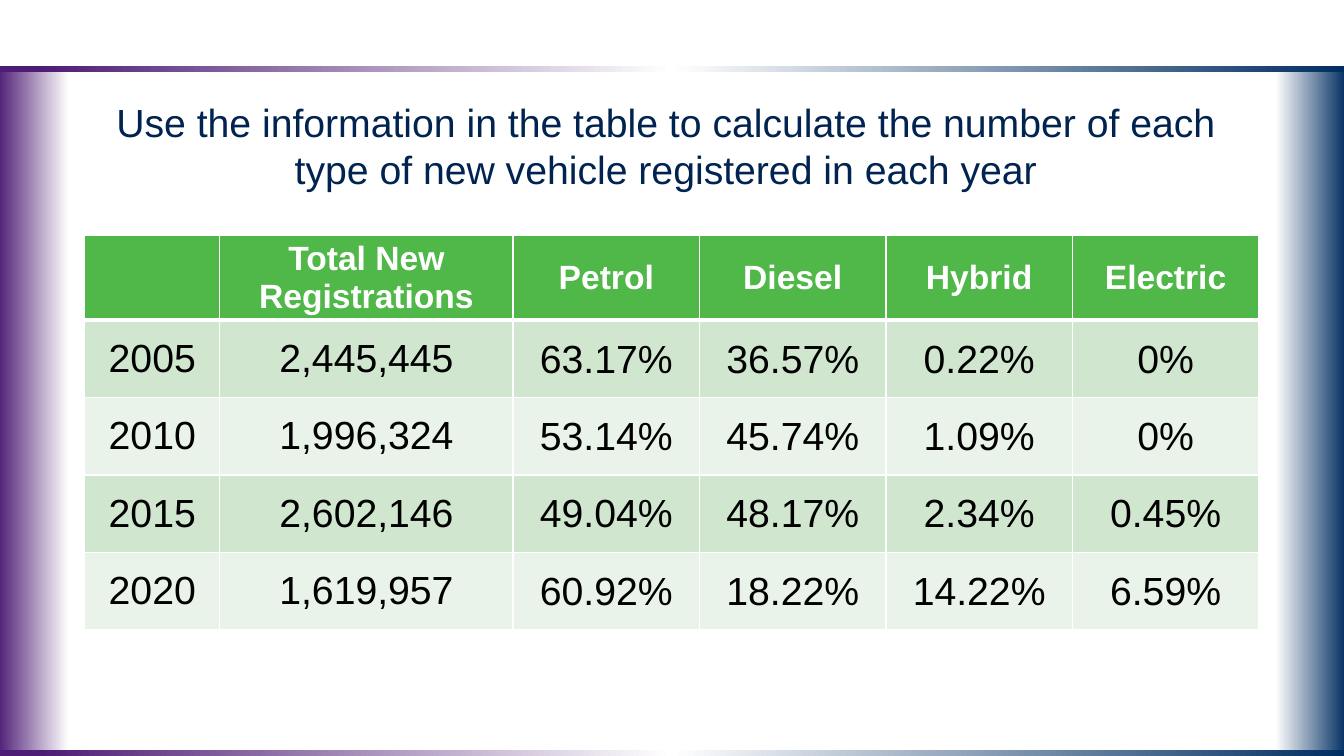
import pptx
import pptx.util
import pptx.dml.color
import pptx.enum.shapes
import pptx.enum.text
import pptx.oxml
import pptx.oxml.ns

Pt = pptx.util.Pt
qn = pptx.oxml.ns.qn
NAMESPACE = pptx.oxml.ns.nsdecls("a")

PURPLE, BLUE, WHITE = "4D1C74", "002D61", "FFFFFF"
GREEN, BANDS = "50B848", ("D0E6CF", "E9F3E9")

QUESTION = (
    "Use the information in the table to calculate the number of each "
    "type of new vehicle registered in each year"
)
REGISTRATIONS = [
    ["", "Total New Registrations", "Petrol", "Diesel", "Hybrid", "Electric"],
    ["2005", "2,445,445", "63.17%", "36.57%", "0.22%", "0%"],
    ["2010", "1,996,324", "53.14%", "45.74%", "1.09%", "0%"],
    ["2015", "2,602,146", "49.04%", "48.17%", "2.34%", "0.45%"],
    ["2020", "1,619,957", "60.92%", "18.22%", "14.22%", "6.59%"],
]


def rgb(color):
    return pptx.dml.color.RGBColor.from_string(color)


def write(frame, text, size=28, color="000000", bold=False):
    frame.word_wrap = True
    paragraph = frame.paragraphs[0]
    paragraph.text = text
    paragraph.alignment = pptx.enum.text.PP_ALIGN.CENTER
    paragraph.font.name = "Arial"
    paragraph.font.size = Pt(size)
    paragraph.font.bold = bold
    paragraph.font.color.rgb = rgb(color)


def add_gradient_band(slide, left, top, width, height, stops):
    band = slide.shapes.add_shape(
        pptx.enum.shapes.MSO_SHAPE.RECTANGLE, Pt(left), Pt(top), Pt(width), Pt(height)
    )
    band.shadow.inherit = False
    band.line.fill.background()
    band.fill.gradient()
    band.fill.gradient_angle = 0
    stop_list = next(band._element.iter(qn("a:gsLst")))
    for default_stop in list(stop_list):
        stop_list.remove(default_stop)
    for percent, color in stops:
        stop_list.append(pptx.oxml.parse_xml(
            f'<a:gs {NAMESPACE} pos="{percent * 1000}"><a:srgbClr val="{color}"/></a:gs>'
        ))


def add_question(slide, left, top, width, height):
    question = slide.shapes.add_textbox(Pt(left), Pt(top), Pt(width), Pt(height))
    write(question.text_frame, QUESTION, color="002350")


def set_borders(cell, bottom):
    properties = cell._tc.get_or_add_tcPr()
    widths = {"lnL": 1, "lnR": 1, "lnT": 1, "lnB": bottom}
    for index, (side, width) in enumerate(widths.items()):
        properties.insert(index, pptx.oxml.parse_xml(
            f'<a:{side} {NAMESPACE} w="{Pt(width)}"><a:solidFill>'
            f'<a:srgbClr val="{WHITE}"/></a:solidFill></a:{side}>'
        ))


def add_registrations(slide, left, top, widths, heights):
    table = slide.shapes.add_table(
        len(heights), len(widths), Pt(left), Pt(top), Pt(sum(widths)), Pt(sum(heights))
    ).table
    for column, width in zip(table.columns, widths):
        column.width = Pt(width)
    for row, height in zip(table.rows, heights):
        row.height = Pt(height)
    for year, values in enumerate(REGISTRATIONS):
        header = year == 0
        for field, value in enumerate(values):
            cell = table.cell(year, field)
            cell.vertical_anchor = pptx.enum.text.MSO_ANCHOR.MIDDLE
            cell.fill.solid()
            cell.fill.fore_color.rgb = rgb(GREEN if header else BANDS[(year - 1) % 2])
            set_borders(cell, bottom=3 if header else 1)
            if header:
                write(cell.text_frame, value, size=24, color=WHITE, bold=True)
            else:
                write(cell.text_frame, value)
                if field >= 2:
                    cell.margin_left = cell.margin_right = cell.margin_top = Pt(0.75)
                    cell.margin_bottom = Pt(0)


def main():
    presentation = pptx.Presentation()
    presentation.slide_width = Pt(960)
    presentation.slide_height = Pt(540)
    slide = presentation.slides.add_slide(presentation.slide_layouts[6])

    add_gradient_band(slide, -2, 48, 51, 491, [(0, PURPLE), (100, WHITE)])
    add_gradient_band(slide, 911, 48, 51, 491, [(0, WHITE), (100, BLUE)])
    for top in (535.7, 47.5):
        add_gradient_band(
            slide, -1, top, 962, 4.3, [(3, PURPLE), (50, WHITE), (100, BLUE)]
        )
    add_registrations(
        slide, 60.5, 168, [96.5, 209.5] + [133.2] * 4, [57] + [55.3] * 4
    )
    add_question(slide, 52.5, 66.5, 846, 53)

    presentation.save("out.pptx")


if __name__ == "__main__":
    main()
